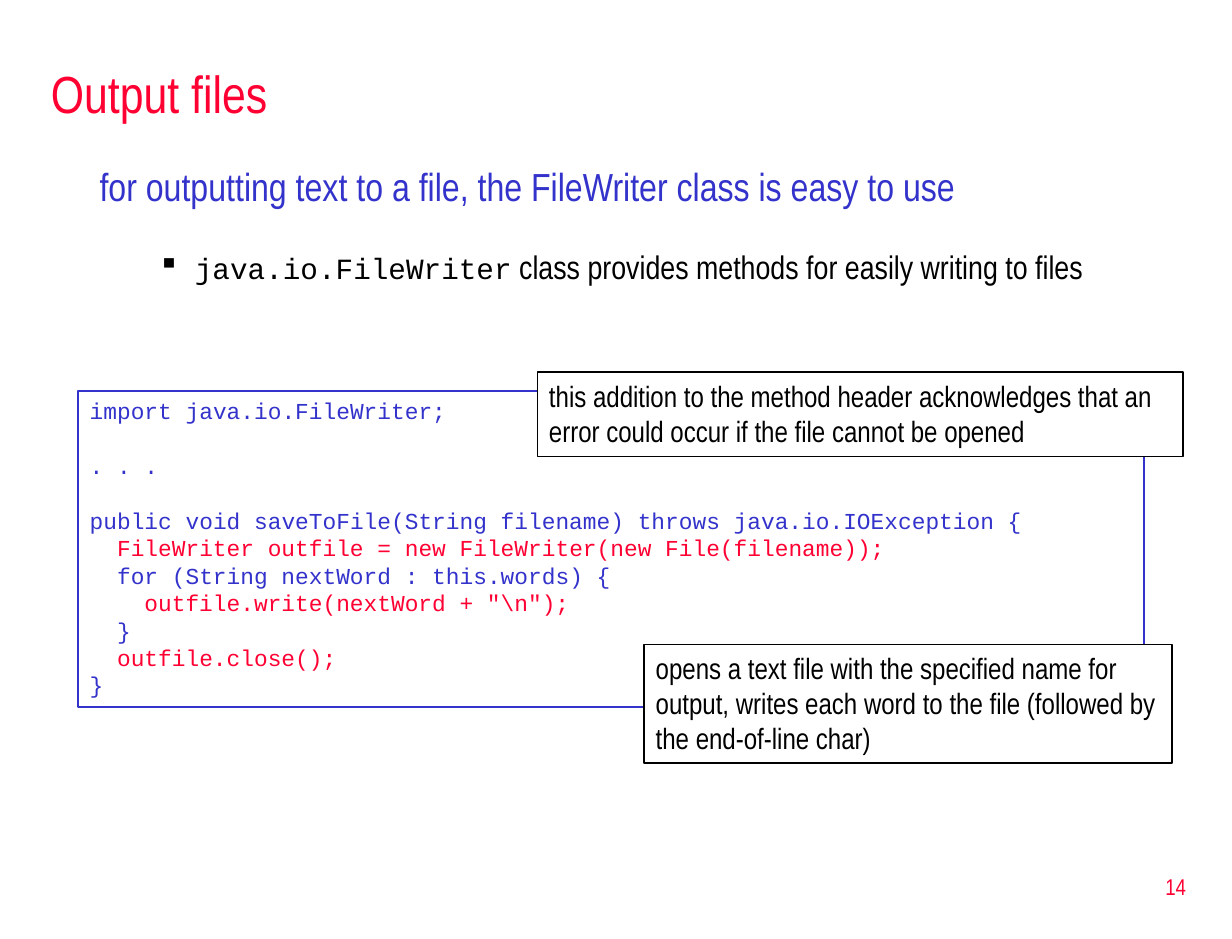
"""Build a slide on writing text files with FileWriter."""
from lxml.etree import SubElement
from pptx import Presentation
from pptx.dml.color import RGBColor
from pptx.enum.shapes import MSO_SHAPE
from pptx.enum.text import MSO_ANCHOR, MSO_AUTO_SIZE, PP_ALIGN
from pptx.oxml.ns import qn
from pptx.util import Pt

COLORS = {"red": "FF0033", "blue": "3333CC", "black": "000000", "white": "FFFFFF"}
SANS = "Arial Narrow"
MONO = "Courier New"
CODE_SIZE = 14
CODE_PITCH = 16.8
CODE_INDENT = 16.8

CODE = [
    (0, 0, "blue", "import java.io.FileWriter;"),
    (1, 0, "blue", ". . ."),
    (1, 0, "blue", "public void saveToFile(String filename) throws java.io.IOException {"),
    (0, 1, "red", "FileWriter outfile = new FileWriter(new File(filename));"),
    (0, 1, "blue", "for (String nextWord : this.words) {"),
    (0, 2, "red", 'outfile.write(nextWord + "\\n");'),
    (0, 1, "blue", "}"),
    (0, 1, "red", "outfile.close();"),
    (0, 0, "blue", "}"),
]
CALLOUTS = [
    ((395.3, 395.3, 324, 72.7),
     "opens a text file with the specified name for output, writes each word "
     "to the file (followed by the end-of-line char)"),
    ((329.8, 228.2, 396, 51.8),
     "this addition to the method header acknowledges that an error could "
     "occur if the file cannot be opened"),
]


def color(name):
    return RGBColor.from_string(COLORS[name])


def style(font, name, size, tint):
    font.name, font.size = name, Pt(size)
    font.color.rgb = color(tint)


def prepare(frame, anchor=MSO_ANCHOR.TOP):
    frame.word_wrap = True
    frame.auto_size = MSO_AUTO_SIZE.NONE
    frame.vertical_anchor = anchor


def indent(para, left, first=0):
    properties = para._p.get_or_add_pPr()
    properties.set("marL", str(Pt(left)))
    properties.set("indent", str(Pt(first)))
    return properties


def write(para, text, name, size, tint, align=PP_ALIGN.LEFT):
    para.text = text
    para.alignment = align
    style(para.font, name, size, tint)


def add_title(page, text):
    title = page.shapes.title
    title.left, title.top, title.width, title.height = map(Pt, (24, 30, 714, 54))
    prepare(title.text_frame, MSO_ANCHOR.MIDDLE)
    write(title.text_frame.paragraphs[0], text, SANS, 32, "red")


def add_text_box(page, bounds, anchor=MSO_ANCHOR.TOP):
    frame = page.shapes.add_textbox(*map(Pt, bounds)).text_frame
    prepare(frame, anchor)
    return frame


def add_panel(page, bounds, line, fill=None):
    panel = page.shapes.add_shape(MSO_SHAPE.RECTANGLE, *map(Pt, bounds))
    panel.shadow.inherit = False
    panel.line.color.rgb = color(line)
    panel.line.width = Pt(1)
    if fill:
        panel.fill.solid()
        panel.fill.fore_color.rgb = color(fill)
    else:
        panel.fill.background()
    prepare(panel.text_frame)
    return panel.text_frame


def add_body(page):
    frame = add_text_box(page, (54, 96, 685, 144))
    lead = frame.paragraphs[0]
    write(lead, "for outputting text to a file, the FileWriter class is easy to use",
          SANS, 24, "blue")
    lead.space_before = Pt(2)
    point = frame.add_paragraph()
    point.line_spacing = 0.8
    point.space_before = Pt(28)
    for text, name, size in (
        ("java.io.FileWriter", MONO, 18),
        (" class provides methods for easily writing to files", SANS, 20),
    ):
        span = point.add_run()
        span.text = text
        style(span.font, name, size, "black")
    SubElement(indent(point, 58.5, -22.5), qn("a:buChar")).set("char", "▪")


def add_code(page):
    frame = add_panel(page, (48, 240, 654, 193.7), "blue")
    for number, (gap, depth, tint, text) in enumerate(CODE):
        para = frame.add_paragraph() if number else frame.paragraphs[0]
        write(para, text, MONO, CODE_SIZE, tint)
        indent(para, depth * CODE_INDENT)
        para.line_spacing = Pt(CODE_PITCH)
        para.space_before = Pt(gap * CODE_PITCH)


def add_callout(page, bounds, text):
    para = add_panel(page, bounds, "black", "white").paragraphs[0]
    write(para, text, SANS, 18, "black")
    para.line_spacing = Pt(21.6)


def add_page_number(page, text):
    frame = add_text_box(page, (577.5, 525, 157.5, 38), MSO_ANCHOR.MIDDLE)
    write(frame.paragraphs[0], text, SANS, 14, "red", PP_ALIGN.RIGHT)


def main():
    deck = Presentation()
    deck.slide_width, deck.slide_height = Pt(756), Pt(576)
    page = deck.slides.add_slide(deck.slide_layouts[5])
    add_page_number(page, "14")
    add_title(page, "Output files")
    add_body(page)
    add_code(page)
    for bounds, text in CALLOUTS:
        add_callout(page, bounds, text)
    deck.save("out.pptx")


if __name__ == "__main__":
    main()
